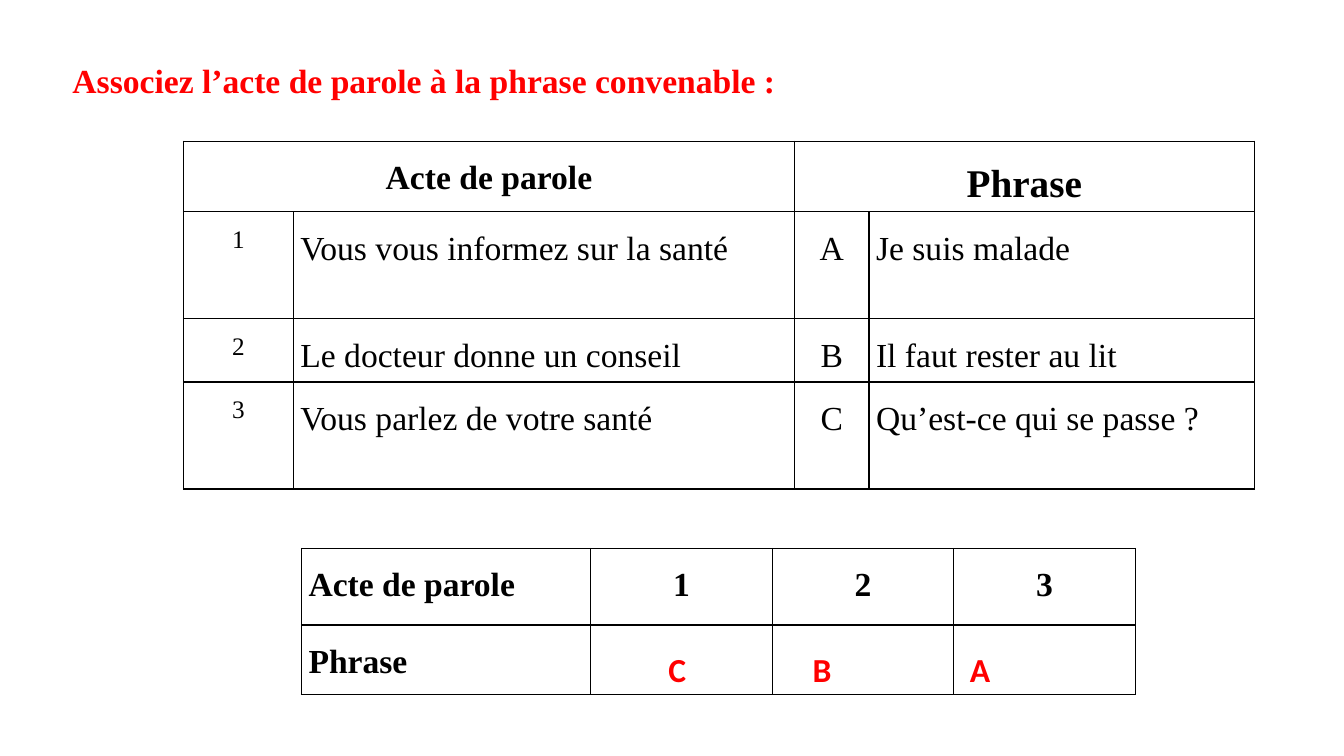
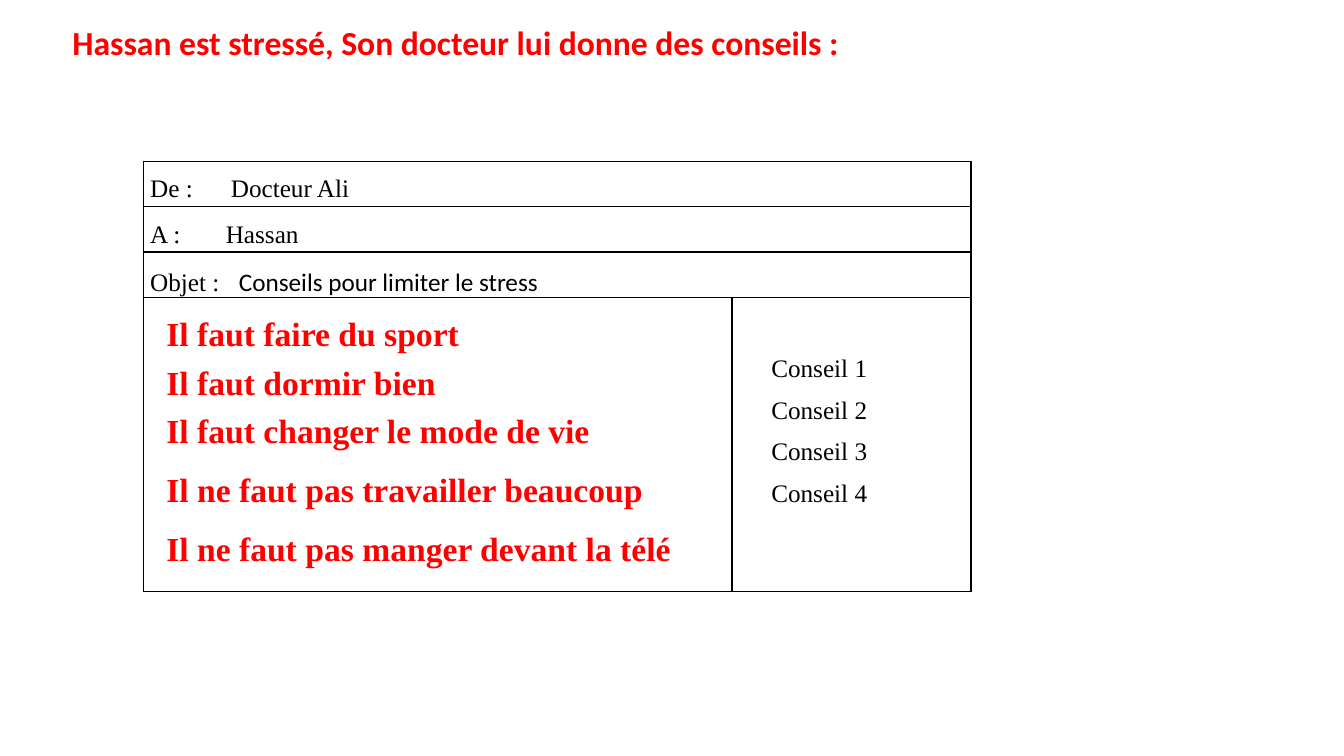
from lxml.etree import SubElement
from pptx import Presentation
from pptx.dml.color import RGBColor
from pptx.enum.text import MSO_AUTO_SIZE as AutoSize, PP_ALIGN as Align
from pptx.oxml.ns import qn
from pptx.util import Inches, Pt

COLORS = {"accent": "FF0000", "ink": "000000"}
SERIF, SANS = "Times New Roman", "Calibri"
ANSWER = {"size": 24, "name": SERIF, "bold": True, "color": "accent"}
BODY = {"size": 24, "name": SERIF, "bold": False, "color": "ink"}
HEAD = BODY | {"bold": True}
SMALL = BODY | {"size": 18}
CENTER = {"alignment": Align.CENTER, "line_spacing": 1.5}
LEFT = {"alignment": Align.LEFT, "line_spacing": 1.5}
JUSTIFY = {"alignment": Align.JUSTIFY, "line_spacing": 1.5}


def write_para(para, spans, layout, indent=0, tab=None):
    """Fill a paragraph with (text, format) spans."""
    for key, value in layout.items():
        setattr(para, key, value)
    properties = para._p.get_or_add_pPr()
    if indent:
        properties.set("marL", str(Inches(indent)))
    if tab:
        stops = SubElement(properties, qn("a:tabLst"))
        SubElement(stops, qn("a:tab"), pos=str(Inches(tab)), algn="l")
    for text, style in spans:
        span = para.add_run()
        span.text = text
        values = {"size": Pt(style["size"]), "name": style["name"], "bold": style["bold"]}
        for key, value in values.items():
            setattr(span.font, key, value)
        span.font.color.rgb = RGBColor.from_string(COLORS[style["color"]])


def add_text(page, box, text, style, layout, indent=0, inset=0.1):
    """Add a one-paragraph text box."""
    frame = page.shapes.add_textbox(*map(Inches, box)).text_frame
    values = {"word_wrap": True, "auto_size": AutoSize.SHAPE_TO_FIT_TEXT,
              "margin_left": Inches(inset), "margin_right": 0}
    for key, value in values.items():
        setattr(frame, key, value)
    write_para(frame.paragraphs[0], [(text, style)], layout, indent)


def add_title(page, box, text, font, spacing=1.0, indent=0):
    """Add the red instruction at the top of a slide."""
    layout = {"alignment": Align.LEFT, "line_spacing": spacing}
    add_text(page, box, text, ANSWER | {"name": font}, layout, indent)


def style_cell(cell):
    """Give a cell thin black borders, no fill and narrow margins."""
    properties = cell._tc.get_or_add_tcPr()
    for side in ("lnL", "lnR", "lnT", "lnB"):
        line = SubElement(properties, qn("a:" + side), w=str(Pt(1)))
        fill = SubElement(line, qn("a:solidFill"))
        SubElement(fill, qn("a:srgbClr"), val=COLORS["ink"])
    cell.fill.background()
    margins = {"margin_left": 0.07, "margin_right": 0.07, "margin_top": 0, "margin_bottom": 0}
    for key, value in margins.items():
        setattr(cell, key, Inches(value))


def add_grid(page, left, top, widths, heights):
    """Add an empty bordered table and return it."""
    box = map(Inches, (left, top, sum(widths), sum(heights)))
    table = page.shapes.add_table(len(heights), len(widths), *box).table
    table.first_row = table.horz_banding = False
    for column, width in zip(table.columns, widths):
        column.width = Inches(width)
    for row, height in zip(table.rows, heights):
        row.height = Inches(height)
    for cell in table.iter_cells():
        style_cell(cell)
    return table


def write_cell(cell, text, style, layout):
    """Write one formatted line in a cell."""
    write_para(cell.text_frame.paragraphs[0], [(text, style)], layout)


def add_matching_table(page, left, top):
    """List the speech acts beside the sentences."""
    table = add_grid(page, left, top, (1.09, 4.97, 0.74, 3.82), (0.63, 1.06, 0.63, 1.06))
    for column, text, size in ((0, "Acte de parole", 24), (2, "Phrase", 28)):
        head = table.cell(0, column)
        head.merge(table.cell(0, column + 1))
        write_cell(head, text, HEAD | {"size": size}, CENTER)
    rows = (
        ("1", "Vous vous informez sur la santé", "A", "Je suis malade"),
        ("2", "Le docteur donne un conseil", "B", "Il faut rester au lit"),
        ("3", "Vous parlez de votre santé", "C", "Qu’est-ce qui se passe ?"),
    )
    formats = ((SMALL, CENTER), (BODY, LEFT), (BODY, CENTER), (BODY, JUSTIFY))
    for row, texts in enumerate(rows, 1):
        for column, (text, (style, layout)) in enumerate(zip(texts, formats)):
            write_cell(table.cell(row, column), text, style, layout)


def add_answer_table(page, left, top):
    """Add the answer grid and its red letters."""
    table = add_grid(page, left, top, (2.87, 1.8, 1.8, 1.8), (0.76, 0.69))
    for column, text in enumerate(("Acte de parole", "1", "2", "3")):
        write_cell(table.cell(0, column), text, HEAD, CENTER if column else LEFT)
    write_cell(table.cell(1, 0), "Phrase", HEAD, LEFT)
    for offset, letter in ((3.49, "C"), (4.92, "B"), (6.48, "A")):
        add_text(page, (left + offset, top + 0.95, 0.43, 0.5), letter,
                 ANSWER | {"name": SANS}, {"alignment": Align.LEFT}, inset=0.15)


def add_message(page, left, top):
    """Add the doctor's message with its header lines and advice."""
    table = add_grid(page, left, top, (5.84, 2.37), (0.44, 0.44, 0.44, 2.92))
    headers = (("De :", "Docteur Ali", SERIF, 0.8), ("A :", "Hassan", SERIF, 0.75),
               ("Objet :", "Conseils pour limiter le stress", SANS, 0.88))
    for row, (label, text, font, tab) in enumerate(headers):
        cell = table.cell(row, 0)
        cell.merge(table.cell(row, 1))
        spans = [(label + "\t", SMALL), (text, SMALL | {"name": font})]
        write_para(cell.text_frame.paragraphs[0], spans, LEFT, tab=tab)
    labels = table.cell(3, 1)
    labels.margin_top = Inches(0.43)
    frame = labels.text_frame
    for number in range(1, 5):
        para = frame.paragraphs[0] if number == 1 else frame.add_paragraph()
        write_para(para, [(f"Conseil {number}", SMALL)], LEFT, indent=0.32)
    advice = (
        (1.46, 3.22, "Il faut faire du sport"),
        (1.94, 2.98, "Il faut dormir bien"),
        (2.42, 4.52, "Il faut changer le mode de vie"),
        (3.0, 5.06, "Il ne faut pas travailler beaucoup"),
        (3.59, 5.34, "Il ne faut pas manger devant la télé"),
    )
    for offset, width, text in advice:
        add_text(page, (left + 0.05, top + offset, width, 0.5), text, ANSWER,
                 {"alignment": Align.LEFT}, inset=0.18)


def build_matching(page):
    """Build the matching exercise."""
    add_title(page, (0.12, 0.35, 12.62, 0.63),
              "Associez l’acte de parole à la phrase convenable :", SERIF, 1.5, 0.5)
    add_matching_table(page, 1.82, 1.4)
    add_answer_table(page, 2.99, 5.44)


def build_advice(page):
    """Build the advice exercise."""
    add_title(page, (0.62, 0.17, 9.01, 0.5),
              "Hassan est stressé, Son docteur lui donne des conseils :", SANS)
    add_message(page, 1.42, 1.6)


def main():
    """Build and save the deck."""
    deck = Presentation()
    deck.slide_width, deck.slide_height = Inches(13.33), Inches(7.5)
    for build in (build_matching, build_advice):
        build(deck.slides.add_slide(deck.slide_layouts[6]))
    deck.save("out.pptx")


if __name__ == "__main__":
    main()
